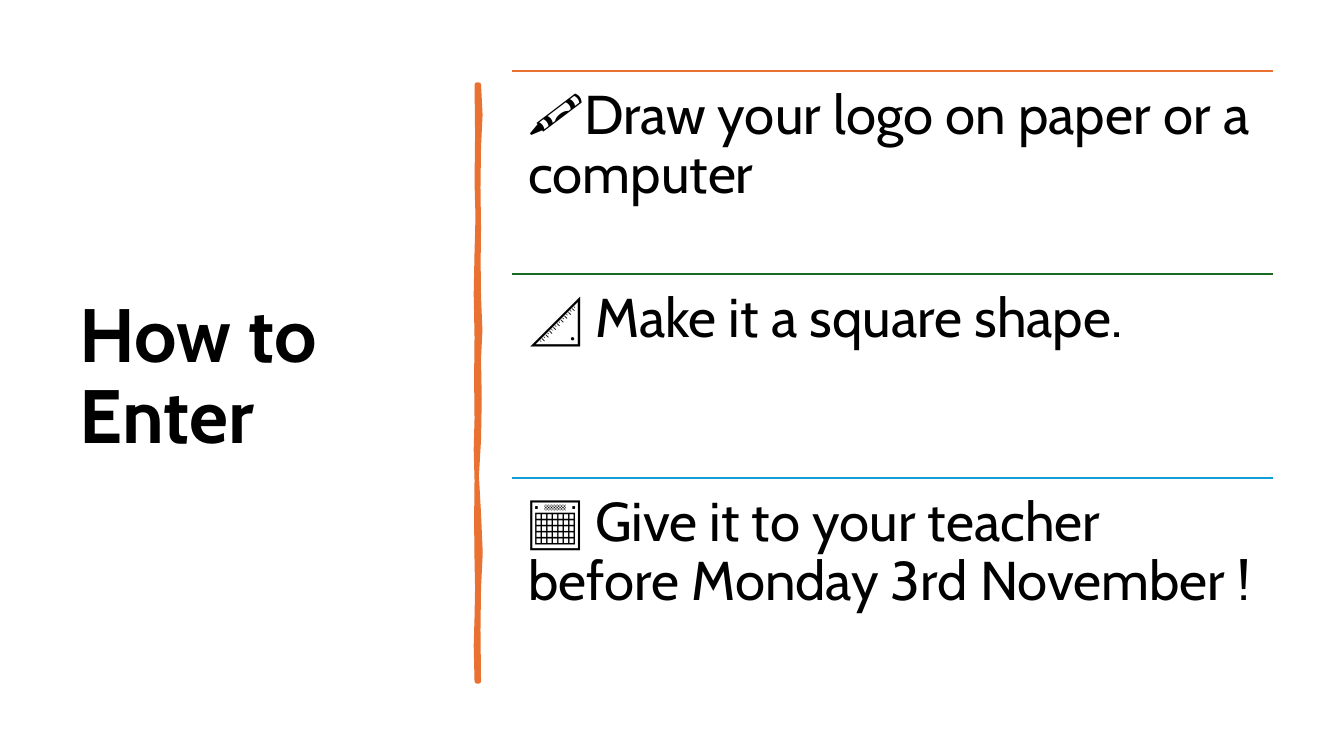
from pptx import Presentation
from pptx.dml.color import RGBColor
from pptx.enum.shapes import MSO_CONNECTOR
from pptx.enum.text import MSO_ANCHOR
from pptx.oxml.ns import qn
from pptx.util import Pt
from lxml.etree import SubElement

COLOURS = {"ink": "000000", "orange": "E97132", "green": "196B24", "blue": "0F9ED5"}
TITLE = "How to Enter"
STEPS = [
    ("🖍️Draw your logo on paper or a computer", "orange"),
    ("📐 Make it a square shape.", "green"),
    ("📅 Give it to your teacher before Monday 3rd November !", "blue"),
]
BRUSH_RIGHT = [
    (342, 60.5), (343.1, 82), (342, 105), (341.6, 134), (342, 163), (341.7, 187),
    (342, 212), (343, 236), (342, 256), (342.5, 285), (342, 314), (340.5, 340),
    (342, 367), (343.2, 395), (342, 420), (341.6, 450), (342, 486.7),
]
BRUSH_LEFT = [
    (340.6, 486.7), (340, 461), (340.6, 441), (341, 420), (340.6, 401),
    (340.3, 372), (340.6, 343), (340, 321), (340.6, 299), (340.3, 270),
    (340.6, 241), (340, 210), (340.6, 180), (341.3, 155), (340.6, 130),
    (341, 96), (340.6, 60.5),
]

TITLE_BOX = (49.7, 50.4, 269.3, 439.9)
TITLE_FORMAT = {"size": Pt(54), "bold": True}
STEP_FORMAT = {"size": Pt(39), "bold": False}
STEP_LEFT, STEP_TOP, STEP_WIDTH, STEP_HEIGHT = 365.8, 50.6, 543.6, 145.3


def rgb(name):
    return RGBColor.from_string(COLOURS[name])


def add_text(slide, text, box, font_format, frame_format):
    frame = slide.shapes.add_textbox(*map(Pt, box)).text_frame
    for key, value in frame_format.items():
        setattr(frame, key, value)
    paragraph = frame.paragraphs[0]
    paragraph.line_spacing = 0.9
    run = paragraph.add_run()
    run.text = text
    for key, value in {"name": "Cabin", **font_format}.items():
        setattr(run.font, key, value)
    run.font.color.rgb = rgb("ink")


def add_brush_stroke(slide):
    start, *rest = [(Pt(x), Pt(y)) for x, y in BRUSH_RIGHT + BRUSH_LEFT]
    builder = slide.shapes.build_freeform(*start)
    builder.add_line_segments(rest, close=True)
    stroke = builder.convert_to_shape()
    stroke.shadow.inherit = False
    stroke.fill.solid()
    stroke.fill.fore_color.rgb = rgb("orange")
    stroke.line.color.rgb = rgb("orange")
    stroke.line.width = Pt(3.25)
    SubElement(stroke.line._get_or_add_ln(), qn("a:round"))


def add_step(slide, index, text, colour):
    top = STEP_TOP + index * STEP_HEIGHT
    rule = slide.shapes.add_connector(
        MSO_CONNECTOR.STRAIGHT,
        Pt(STEP_LEFT), Pt(top), Pt(STEP_LEFT + STEP_WIDTH), Pt(top),
    )
    rule.line.color.rgb = rgb(colour)
    rule.line.width = Pt(1.5)
    SubElement(rule._element.spPr, qn("a:effectLst"))
    margins = {f"margin_{side}": Pt(11.7) for side in ("left", "top", "right", "bottom")}
    add_text(
        slide, text, (STEP_LEFT, top, STEP_WIDTH, STEP_HEIGHT), STEP_FORMAT,
        {"word_wrap": True, "vertical_anchor": MSO_ANCHOR.TOP, **margins},
    )


def main():
    deck = Presentation()
    deck.slide_width, deck.slide_height = Pt(960), Pt(540)
    slide = deck.slides.add_slide(deck.slide_layouts[6])
    add_text(
        slide, TITLE, TITLE_BOX, TITLE_FORMAT,
        {"word_wrap": True, "vertical_anchor": MSO_ANCHOR.MIDDLE},
    )
    add_brush_stroke(slide)
    for index, (text, colour) in enumerate(STEPS):
        add_step(slide, index, text, colour)
    deck.save("out.pptx")


if __name__ == "__main__":
    main()
